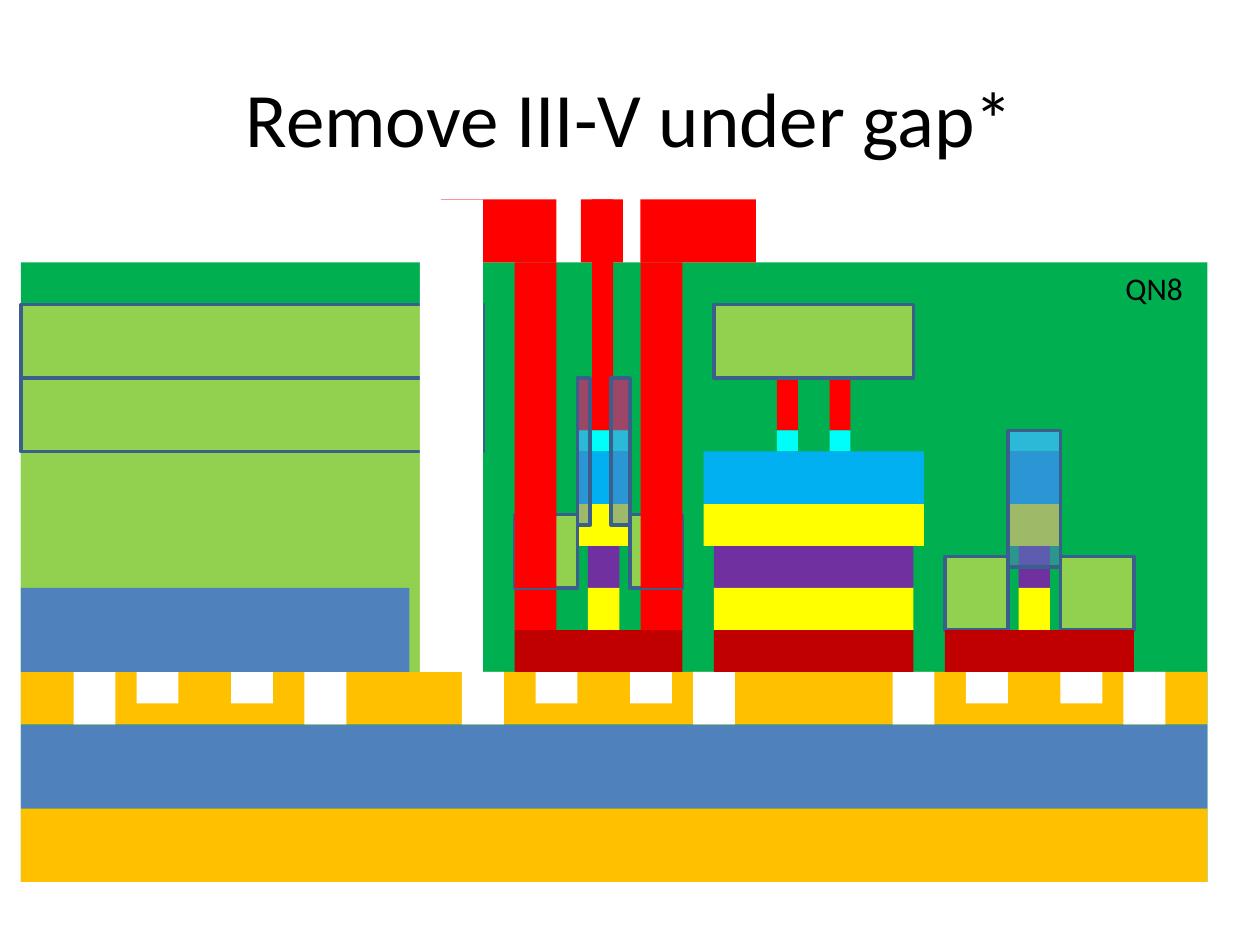
from lxml.etree import SubElement
from pptx import Presentation
from pptx.dml.color import RGBColor
from pptx.enum.shapes import MSO_SHAPE
from pptx.enum.text import MSO_ANCHOR, PP_ALIGN
from pptx.oxml.ns import qn
from pptx.util import Pt

BLACK = RGBColor(0x00, 0x00, 0x00)
WHITE = RGBColor(0xFF, 0xFF, 0xFF)
GREEN = RGBColor(0x00, 0xB0, 0x50)
LIME = RGBColor(0x92, 0xD0, 0x50)
GOLD = RGBColor(0xFF, 0xC0, 0x00)
BLUE = RGBColor(0x4F, 0x81, 0xBD)
SKY = RGBColor(0x00, 0xB0, 0xF0)
CYAN = RGBColor(0x00, 0xFE, 0xF8)
YELLOW = RGBColor(0xFF, 0xFF, 0x00)
PURPLE = RGBColor(0x70, 0x30, 0xA0)
RED = RGBColor(0xFF, 0x00, 0x00)
CRIMSON = RGBColor(0xC0, 0x00, 0x00)
NAVY = RGBColor(0x3A, 0x5F, 0x8C)

FONT = "Calibri"
OUTLINED = {"line": NAVY}
GLASS = {"line": NAVY, "opacity": 55}

SHALLOW_TRENCHES = [(left, 24) for left in (78, 132, 306, 360, 552, 606)]
DEEP_TRENCHES = [(left, 24) for left in (42, 174, 264, 396, 510, 642)]
FULL_WIDTH = [(12, 678)]
MESA_STEMS = [(336, 18), (408, 114), (582, 18)]
MESA_CAPS = [(330, 30), (402, 126), (576, 30)]

LAYERS = [
    (GREEN, 150, 354, FULL_WIDTH, {}),
    (GOLD, 462, 42, FULL_WIDTH, {}),
    (BLUE, 414, 48, FULL_WIDTH, {}),
    (GOLD, 384, 30, FULL_WIDTH, {}),
    (WHITE, 384, 18, SHALLOW_TRENCHES, {}),
    (WHITE, 384, 30, DEEP_TRENCHES, {}),
    (LIME, 258, 126, [(12, 228)], {}),
    (BLUE, 336, 48, [(12, 222)], {}),
    (LIME, 216, 42, [(12, 264)], OUTLINED),
    (RED, 216, 30, [(330, 30), (444, 12), (474, 12)], {}),
    (CYAN, 246, 12, [(330, 30), (444, 12), (474, 12), (576, 30)], {}),
    (SKY, 258, 30, MESA_CAPS, {}),
    (YELLOW, 288, 24, MESA_CAPS, {}),
    (PURPLE, 312, 24, MESA_STEMS, {}),
    (YELLOW, 336, 24, MESA_STEMS, {}),
    (RED, 336, 24, [(294, 24), (366, 24)], {}),
    (RED, 192, 24, [(338.4, 12)], {}),
    (BLUE, 216, 84, [(330, 7.2), (349.2, 10.8)], GLASS),
    (BLUE, 246, 78, [(576, 30)], GLASS),
    (LIME, 174, 42, [(12, 264), (408, 114)], OUTLINED),
    (LIME, 294, 42, [(294, 36), (360, 30)], OUTLINED),
    (LIME, 318, 42, [(540, 36), (606, 42)], OUTLINED),
    (CRIMSON, 360, 24, [(294, 96), (408, 114), (540, 108)], {}),
    (RED, 150, 186, [(294, 24), (366, 24)], {}),
    (RED, 114, 36, [(252, 66), (366, 66), (332, 24)], {}),
    (RED, 114, 78, [(338.4, 12)], {}),
    (WHITE, 114, 270, [(240, 36)], {}),
]

TEXTS = [
    ("Remove III-V under gap*", (36, 21.6, 648, 90),
     {"size": 44, "align": PP_ALIGN.CENTER, "anchor": MSO_ANCHOR.MIDDLE}),
    ("QN8", (636, 150, 54, 30), {"size": 18}),
]


def add_block(page, area, colour, line=None, opacity=None):
    block = page.shapes.add_shape(MSO_SHAPE.RECTANGLE, *map(Pt, area))
    block.shadow.inherit = False
    block.fill.solid()
    block.fill.fore_color.rgb = colour
    if opacity:
        tint = block.fill._xPr.find(qn("a:solidFill"))[0]
        SubElement(tint, qn("a:alpha"), val=str(opacity * 1000))
    if line:
        block.line.color.rgb = line
        block.line.width = Pt(2)
    else:
        block.line.fill.background()


def add_text(page, text, area, size=18, align=PP_ALIGN.LEFT, anchor=MSO_ANCHOR.TOP):
    box = page.shapes.add_textbox(*map(Pt, area))
    frame = box.text_frame
    frame.word_wrap = True
    frame.vertical_anchor = anchor
    para = frame.paragraphs[0]
    para.alignment = align
    span = para.add_run()
    span.text = text
    span.font.name = FONT
    span.font.size = Pt(size)
    span.font.color.rgb = BLACK


def main():
    deck = Presentation()
    deck.slide_width, deck.slide_height = Pt(720), Pt(540)
    page = deck.slides.add_slide(deck.slide_layouts[6])
    for colour, top, height, spans, style in LAYERS:
        for left, width in spans:
            add_block(page, (left, top, width, height), colour, **style)
    for text, area, style in TEXTS:
        add_text(page, text, area, **style)
    deck.save("out.pptx")


if __name__ == "__main__":
    main()
